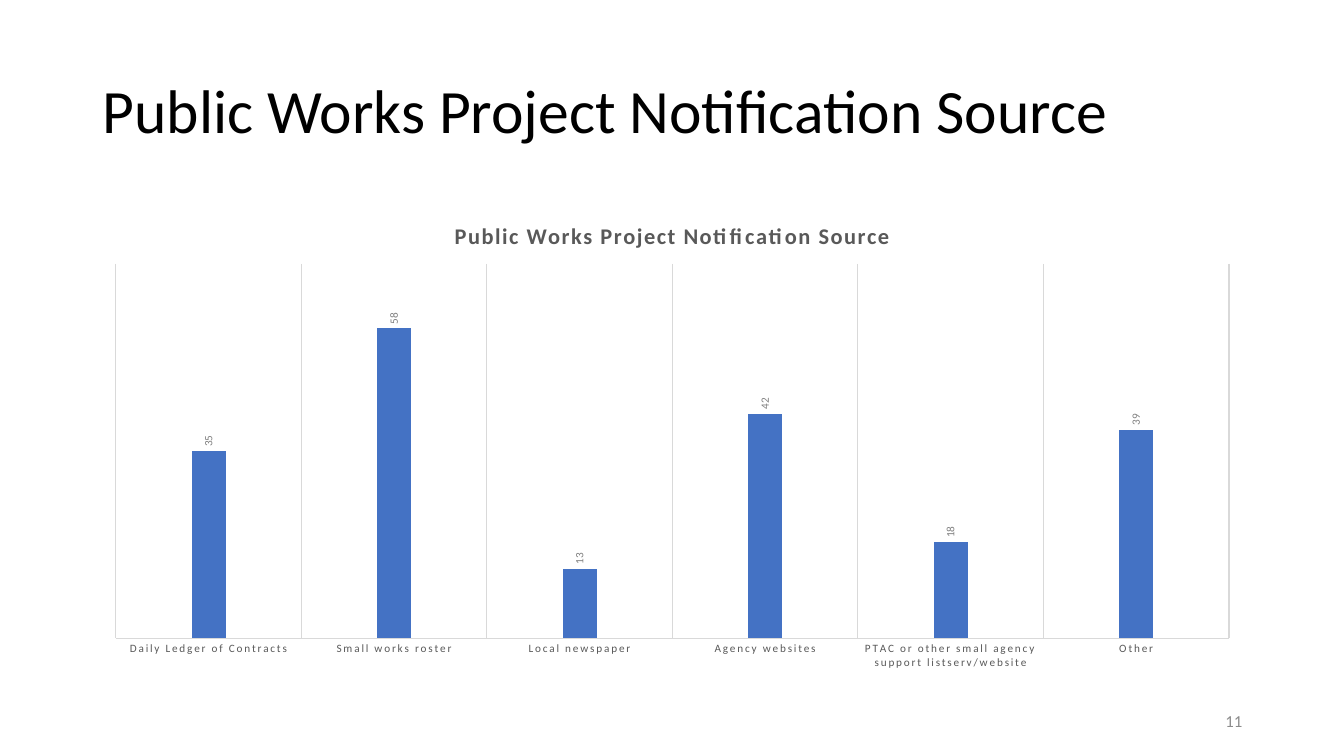
from lxml import etree
from pptx import Presentation
from pptx.chart.data import CategoryChartData
from pptx.dml.color import RGBColor
from pptx.enum.chart import XL_CHART_TYPE, XL_LABEL_POSITION, XL_TICK_MARK
from pptx.enum.text import MSO_ANCHOR, PP_ALIGN
from pptx.oxml.ns import qn
from pptx.util import Inches, Pt

COLUMN = XL_CHART_TYPE.COLUMN_CLUSTERED
OUTSIDE_END = XL_LABEL_POSITION.OUTSIDE_END
NO_TICK = XL_TICK_MARK.NONE
MIDDLE = MSO_ANCHOR.MIDDLE
LEFT, RIGHT = PP_ALIGN.LEFT, PP_ALIGN.RIGHT

COLORS = {"title": "000000", "bar": "4472C4", "label": "808080",
          "axis": "595959", "line": "D9D9D9", "number": "8C8C8C"}
HEADING = "Public Works Project Notification Source"
SOURCES = {
    "Daily Ledger of Contracts": 35,
    "Small works roster": 58,
    "Local newspaper": 13,
    "Agency websites": 42,
    "PTAC or other small agency support listserv/website": 18,
    "Other": 39,
}
PLOT_LAYOUT = {"layoutTarget": "inner", "xMode": "edge", "yMode": "edge",
               "x": 0.02, "y": 0.13, "w": 0.96, "h": 0.78}


def style_font(font, size, color, bold=False):
    font.name = "Calibri"
    font.size = Pt(size)
    font.bold = bold
    font.color.rgb = RGBColor.from_string(COLORS[color])


def style_line(line):
    line.color.rgb = RGBColor.from_string(COLORS["line"])
    line.width = Pt(0.75)


prs = Presentation()
prs.slide_width, prs.slide_height = Inches(13.33), Inches(7.5)
s = prs.slides.add_slide(prs.slide_layouts[5])

title = s.shapes.title
title.left, title.top = Inches(0.92), Inches(0.4)
title.width, title.height = Inches(11.5), Inches(1.45)
tf = title.text_frame
tf.text = HEADING
tf.vertical_anchor = MIDDLE
p = tf.paragraphs[0]
p.alignment = LEFT
p.line_spacing = 0.9
style_font(p.font, 44, "title")

data = CategoryChartData()
data.categories = list(SOURCES)
data.add_series("Series 1", list(SOURCES.values()))
chart = s.shapes.add_chart(COLUMN, Inches(0.92), Inches(2), Inches(11.5),
                           Inches(4.76), data).chart
style_font(chart.font, 10, "title")
chart.has_legend = False
chart.has_title = True
p = chart.chart_title.text_frame.paragraphs[0]
r = p.add_run()
r.text = HEADING
style_font(r.font, 16, "axis", bold=True)
r.font._element.set("spc", "120")
chart.chart_title.include_in_layout = False

plot = chart.plots[0]
plot.gap_width = 444
plot.overlap = -90
plot.vary_by_categories = False
bars = plot.series[0]
bars.format.fill.solid()
bars.format.fill.fore_color.rgb = RGBColor.from_string(COLORS["bar"])
labels = bars.data_labels
labels.show_value = True
labels.position = OUTSIDE_END
style_font(labels.font, 8, "label")
body = labels._element.find(qn("c:txPr")).find(qn("a:bodyPr"))
body.set("rot", "-5400000")
body.set("vert", "horz")

cat_axis = chart.category_axis
cat_axis.major_tick_mark = NO_TICK
cat_axis.has_major_gridlines = True
style_line(cat_axis.major_gridlines.format.line)
style_line(cat_axis.format.line)
font = cat_axis.tick_labels.font
style_font(font, 8, "axis")
font._element.set("spc", "120")

val_axis = chart.value_axis
val_axis.minimum_scale, val_axis.maximum_scale = 0, 70
val_axis.has_major_gridlines = False
val_axis.visible = False

plot_area = chart._chartSpace.find(".//" + qn("c:plotArea"))
layout = plot_area.find(qn("c:layout"))
if layout is None:
    layout = etree.Element(qn("c:layout"))
    plot_area.insert(0, layout)
manual = etree.SubElement(layout, qn("c:manualLayout"))
for tag, value in PLOT_LAYOUT.items():
    etree.SubElement(manual, qn("c:" + tag)).set("val", str(value))

number = s.shapes.add_textbox(Inches(9.42), Inches(6.95), Inches(3), Inches(0.4))
tf = number.text_frame
tf.word_wrap = True
tf.vertical_anchor = MIDDLE
p = tf.paragraphs[0]
p.text = "11"
p.alignment = RIGHT
style_font(p.font, 12, "number")

prs.save("out.pptx")
